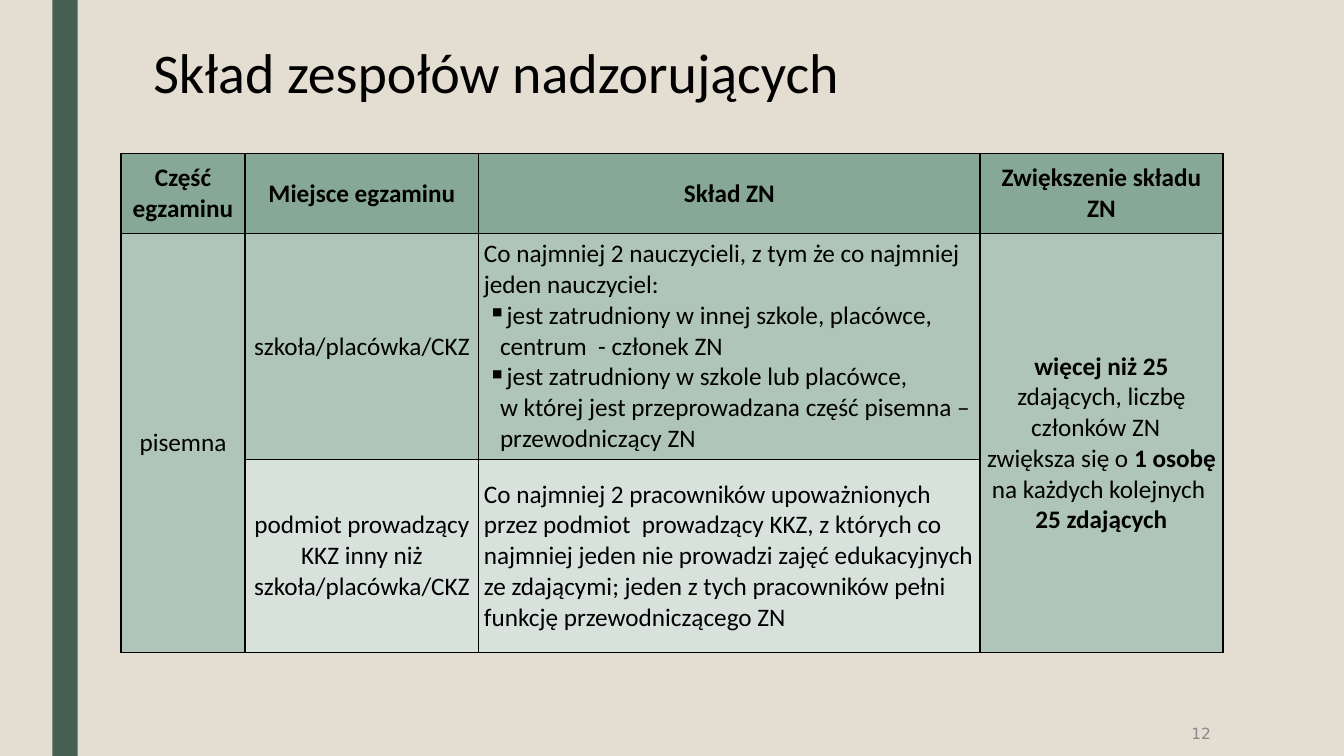
from lxml.etree import SubElement
from pptx import Presentation
from pptx.dml.color import RGBColor
from pptx.enum.shapes import MSO_SHAPE
from pptx.enum.text import MSO_ANCHOR, PP_ALIGN
from pptx.oxml.ns import qn
from pptx.util import Inches, Pt

COLUMNS = (1.23, 2.32, 4.97, 2.41)
ROWS = (0.8, 2.23, 1.92)
HEADER, FIRST, SECOND = "87A896", "AFC5B9", "D7E2DC"
BULLET = "▪"

HEADINGS = ("Część egzaminu", "Miejsce egzaminu", "Skład ZN", "Zwiększenie składu ZN")
SCHOOL_TEAM = (
    "Co najmniej 2 nauczycieli, z tym że co najmniej jeden nauczyciel:",
    BULLET + "jest zatrudniony w innej szkole, placówce, centrum  - członek ZN",
    BULLET + "jest zatrudniony w szkole lub placówce, \n"
    "w której jest przeprowadzana część pisemna – przewodniczący ZN",
)
COURSE_TEAM = (
    "Co najmniej 2 pracowników upoważnionych przez podmiot  prowadzący KKZ, "
    "z których co najmniej jeden nie prowadzi zajęć edukacyjnych ze zdającymi; "
    "jeden z tych pracowników pełni  funkcję przewodniczącego ZN",
)
# Every other piece is bold, starting with the first.
INCREASE = (
    "więcej niż 25 ",
    "zdających, liczbę członków ZN  \nzwiększa się o ",
    "1 osobę ",
    "na każdych kolejnych \n",
    "25 zdających",
)


def color(code):
    return RGBColor.from_string(code)


def paint(target, code):
    target.fill.solid()
    target.fill.fore_color.rgb = color(code)


def set_font(font, size, name="Calibri", code="000000", bold=False):
    font.size, font.name, font.bold = Pt(size), name, bold
    font.color.rgb = color(code)


def add_spans(para, text, bold=None):
    """Add text to a paragraph, turning newlines into line breaks."""
    for index, line in enumerate(text.split("\n")):
        if index:
            para.add_line_break()
        if line:
            span = para.add_run()
            span.text = line
            span.font.bold = bold


def add_bullet(para):
    properties = para._p.get_or_add_pPr()
    properties.set("marL", str(Inches(0.16)))
    properties.set("indent", str(Inches(-0.12)))
    SubElement(properties, qn("a:buChar")).set("char", BULLET)


def add_borders(cell):
    properties = cell._tc.get_or_add_tcPr()
    for index, side in enumerate(("lnL", "lnR", "lnT", "lnB")):
        line = properties.makeelement(qn(f"a:{side}"), {"w": str(Pt(1))})
        fill = SubElement(line, qn("a:solidFill"))
        SubElement(fill, qn("a:srgbClr")).set("val", "000000")
        properties.insert(index, line)


def write_cell(cell, paragraphs, align=PP_ALIGN.CENTER, bold=False):
    for index, text in enumerate(paragraphs):
        frame = cell.text_frame
        para = frame.add_paragraph() if index else frame.paragraphs[0]
        if text.startswith(BULLET):
            add_bullet(para)
        para.alignment = align
        set_font(para.font, 18, bold=bold)
        add_spans(para, text.removeprefix(BULLET))


def write_increase(cell):
    para = cell.text_frame.paragraphs[0]
    para.alignment = PP_ALIGN.CENTER
    para.space_after = Pt(6)
    set_font(para.font, 18)
    for index, text in enumerate(INCREASE):
        add_spans(para, text, bold=index % 2 == 0)


def add_team_table(page):
    frame = page.shapes.add_table(
        len(ROWS), len(COLUMNS), Inches(1.2), Inches(1.52),
        Inches(sum(COLUMNS)), Inches(sum(ROWS)))
    table = frame.table
    for column, width in zip(table.columns, COLUMNS):
        column.width = Inches(width)
    for row, height, fill in zip(table.rows, ROWS, (HEADER, FIRST, SECOND)):
        row.height = Inches(height)
        for cell in row.cells:
            paint(cell, fill)
            add_borders(cell)
            cell.vertical_anchor = MSO_ANCHOR.MIDDLE
            cell.margin_left = cell.margin_right = Inches(0.05)
            cell.margin_top = cell.margin_bottom = Inches(0.05)
    for column in (0, 3):
        table.cell(1, column).merge(table.cell(2, column))

    for column, heading in enumerate(HEADINGS):
        write_cell(table.cell(0, column), [heading], bold=True)
    write_cell(table.cell(1, 0), ["pisemna"])
    write_cell(table.cell(1, 1), ["szkoła/placówka/CKZ"])
    write_cell(table.cell(2, 1), ["podmiot prowadzący KKZ inny niż szkoła/placówka/CKZ"])
    write_cell(table.cell(1, 2), SCHOOL_TEAM, PP_ALIGN.LEFT)
    write_cell(table.cell(2, 2), COURSE_TEAM, PP_ALIGN.LEFT)
    write_increase(table.cell(1, 3))


def add_side_bar(page, height):
    bar = page.shapes.add_shape(MSO_SHAPE.RECTANGLE, Inches(0.52), 0, Inches(0.25), height)
    bar.shadow.inherit = False
    paint(bar, "455F51")
    bar.line.fill.background()


def write_title(page, text):
    title = page.shapes.title
    title.left, title.top = Inches(1.42), Inches(0.37)
    title.width, title.height = Inches(7.73), Inches(0.55)
    frame = title.text_frame
    frame.vertical_anchor = MSO_ANCHOR.TOP
    frame.margin_top, frame.margin_bottom = Inches(0.08), 0
    para = frame.paragraphs[0]
    para.text = text
    para.alignment = PP_ALIGN.LEFT
    para.line_spacing = 0.89
    set_font(para.font, 40)


def add_page_number(page, number):
    box = page.shapes.add_textbox(Inches(10.36), Inches(7.06), Inches(1.75), Inches(0.44))
    frame = box.text_frame
    frame.word_wrap = True
    frame.vertical_anchor = MSO_ANCHOR.MIDDLE
    para = frame.paragraphs[0]
    para.text = number
    para.alignment = PP_ALIGN.RIGHT
    set_font(para.font, 11, "DejaVu Sans", "898989")


def main():
    deck = Presentation()
    deck.slide_width, deck.slide_height = Inches(13.33), Inches(7.5)
    page = deck.slides.add_slide(deck.slide_layouts[5])
    paint(page.background, "E3DED1")
    add_side_bar(page, deck.slide_height)
    write_title(page, "Skład zespołów nadzorujących")
    add_team_table(page)
    add_page_number(page, "12")
    deck.save("out.pptx")


if __name__ == "__main__":
    main()
